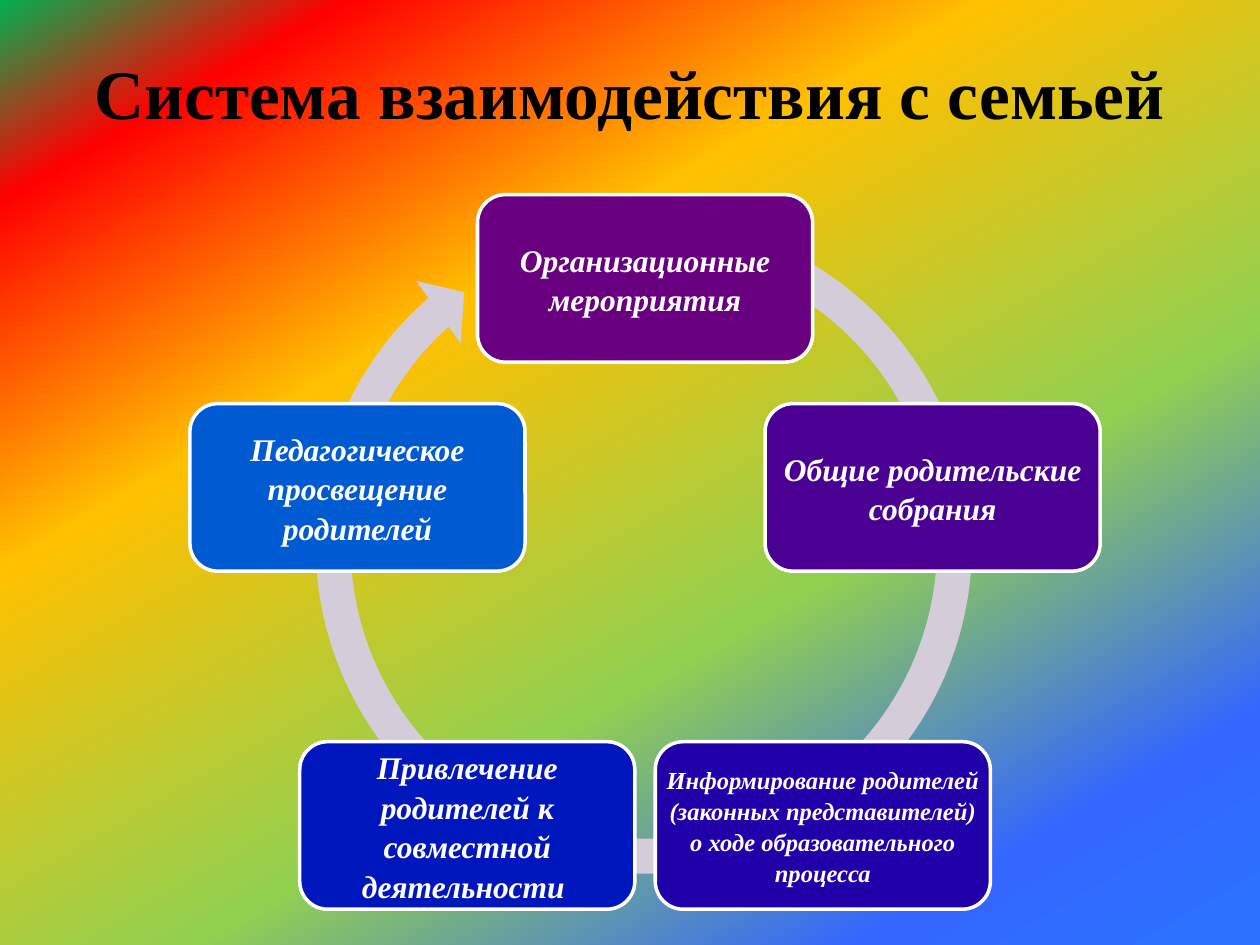
from math import cos, radians, sin

from lxml import etree
from pptx import Presentation
from pptx.dml.color import RGBColor
from pptx.enum.shapes import MSO_SHAPE
from pptx.enum.text import MSO_ANCHOR, PP_ALIGN
from pptx.oxml.ns import qn
from pptx.util import Inches, Pt

ROUND_RECT = MSO_SHAPE.ROUNDED_RECTANGLE
CIRCULAR_ARROW = MSO_SHAPE.CIRCULAR_ARROW
CENTER = PP_ALIGN.CENTER
MIDDLE = MSO_ANCHOR.MIDDLE

FONT = "Times New Roman"
BLACK = RGBColor(0, 0, 0)
WHITE = RGBColor(255, 255, 255)
RING = RGBColor(0xD4, 0xCC, 0xD8)

TITLE = "Система взаимодействия с семьей"
STEPS = [
    ("Организационные мероприятия", RGBColor(0x68, 0x00, 0x7F), 18),
    ("Общие родительские собрания", RGBColor(0x4B, 0x00, 0x94), 18),
    ("Информирование родителей (законных представителей) о ходе "
     "образовательного процесса", RGBColor(0x21, 0x00, 0xA9), 14),
    ("Привлечение родителей к совместной деятельности ",
     RGBColor(0x00, 0x17, 0xBE), 18),
    ("Педагогическое просвещение родителей", RGBColor(0x00, 0x5B, 0xD3), 18),
]
RAINBOW = [(0, "00B050"), (12, "FF0000"), (34, "FFC000"),
           (63, "92D050"), (86, "3366FF"), (98, "2C71FF")]

CENTER_X, CENTER_Y, RADIUS = 5.12, 4.61, 2.4
BOX_W, BOX_H = 2.66, 1.33
INSET = Inches(0.01)


def paint_background(s):
    fill = s.background.fill
    fill.gradient()
    fill.gradient_angle = 300
    stops = s.element.find(".//" + qn("a:gsLst"))
    for stop in list(stops):
        stops.remove(stop)
    for percent, color in RAINBOW:
        stop = etree.SubElement(stops, qn("a:gs"), pos=str(percent * 1000))
        etree.SubElement(stop, qn("a:srgbClr"), val=color)


def write(shape, text, size, color, italic=False):
    tf = shape.text_frame
    tf.text = text
    tf.word_wrap = True
    tf.vertical_anchor = MIDDLE
    p = tf.paragraphs[0]
    p.alignment = CENTER
    font = p.runs[0].font
    font.name, font.size, font.bold = FONT, Pt(size), True
    font.italic = italic
    font.color.rgb = color
    return tf


def add_filled(s, kind, x, y, w, h, color):
    sp = s.shapes.add_shape(kind, Inches(x), Inches(y), Inches(w), Inches(h))
    sp.shadow.inherit = False
    sp.fill.solid()
    sp.fill.fore_color.rgb = color
    return sp


def add_ring(s):
    sp = add_filled(s, CIRCULAR_ARROW, 2.34, 1.56, 5.54, 5.54, RING)
    sp.line.fill.background()
    for i, value in enumerate((0.05, 3.6, 137.189, 173.57, 0.055)):
        sp.adjustments[i] = value


def add_step(s, i, text, color, size):
    angle = radians(360 / len(STEPS) * i)
    x = CENTER_X + RADIUS * sin(angle) - BOX_W / 2
    y = CENTER_Y - RADIUS * cos(angle) - BOX_H / 2
    sp = add_filled(s, ROUND_RECT, x, y, BOX_W, BOX_H, color)
    sp.line.color.rgb = WHITE
    sp.line.width = Pt(2)
    tf = write(sp, text, size, WHITE, italic=True)
    tf.margin_left = tf.margin_right = INSET
    tf.margin_top = tf.margin_bottom = INSET
    tf.paragraphs[0].line_spacing = 1.05


def main():
    prs = Presentation()
    prs.slide_width, prs.slide_height = Inches(10), Inches(7.5)
    s = prs.slides.add_slide(prs.slide_layouts[5])
    paint_background(s)
    title = s.shapes.title
    title.left, title.top = Inches(0.5), Inches(0.3)
    title.width, title.height = Inches(9), Inches(0.85)
    write(title, TITLE, 39.6, BLACK)
    add_ring(s)
    for i, step in enumerate(STEPS):
        add_step(s, i, *step)
    prs.save("out.pptx")


if __name__ == "__main__":
    main()
